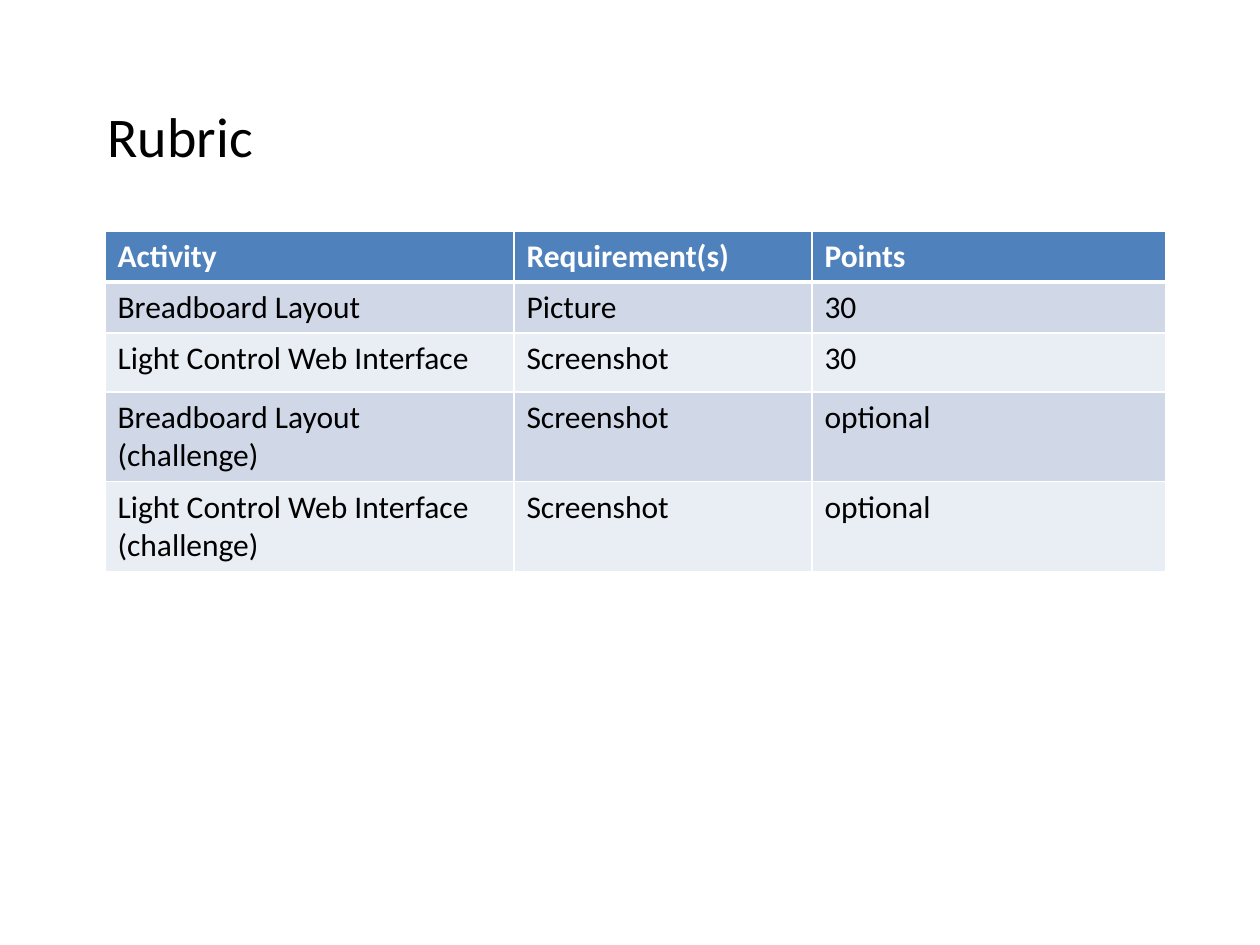
from dataclasses import dataclass

from lxml import etree
from pptx import Presentation, util as u
from pptx.dml.color import RGBColor
from pptx.oxml import ns

PX = 914400 / 126  # EMU in one px


@dataclass(frozen=True)
class Theme:
    font: str = "Calibri"
    heading_size: int = 32
    table_size: int = 18
    black: str = "000000"
    white: str = "FFFFFF"
    header: str = "4F81BD"
    bands: tuple = ("D0D8E8", "E9EDF4")
    line: int = 1
    header_line: int = 3


@dataclass(frozen=True)
class Row:
    activity: str
    requirement: str
    points: str
    height: int


THEME = Theme()
COLUMN_WIDTHS = (409, 298, 354)
ROWS = (
    Row("Activity", "Requirement(s)", "Points", 51),
    Row("Breadboard Layout", "Picture", "30", 51),
    Row("Light Control Web Interface", "Screenshot", "30", 59),
    Row("Breadboard Layout (challenge)", "Screenshot", "optional", 89),
    Row("Light Control Web Interface (challenge)", "Screenshot", "optional", 89),
)


def px(length: int) -> u.Emu:
    return u.Emu(round(length * PX))


def format_runs(paragraph, size: int, color: str, bold: bool = False) -> None:
    for run in paragraph.runs:
        run.font.name = THEME.font
        run.font.size = u.Pt(size)
        run.font.bold = bold
        run.font.color.rgb = RGBColor.from_string(color)


def add_border(cell, side: str, width: int) -> None:
    properties = cell._tc.get_or_add_tcPr()
    line = etree.SubElement(properties, ns.qn(f"a:ln{side}"), w=str(u.Pt(width)))
    fill = etree.SubElement(line, ns.qn("a:solidFill"))
    etree.SubElement(fill, ns.qn("a:srgbClr"), val=THEME.white)


def format_cell(cell, row_index: int) -> None:
    is_header = row_index == 0
    widths = {"L": THEME.line, "R": THEME.line,
              "T": THEME.header_line if row_index == 1 else THEME.line,
              "B": THEME.header_line if is_header else THEME.line}
    for side, width in widths.items():
        add_border(cell, side, width)
    fill = THEME.header if is_header else THEME.bands[(row_index - 1) % 2]
    cell.fill.solid()
    cell.fill.fore_color.rgb = RGBColor.from_string(fill)
    color = THEME.white if is_header else THEME.black
    format_runs(cell.text_frame.paragraphs[0], THEME.table_size, color, is_header)


def add_heading(slide, wording: str) -> None:
    body = slide.placeholders[1]
    body.left, body.top, body.width, body.height = map(px, (95, 95, 1134, 624))
    body.text_frame.text = wording
    paragraph = body.text_frame.paragraphs[0]
    etree.SubElement(paragraph._p.get_or_add_pPr(), ns.qn("a:buNone"))
    format_runs(paragraph, THEME.heading_size, THEME.black)


def add_rubric(slide, left: int, top: int) -> None:
    frame = slide.shapes.add_table(
        len(ROWS), len(COLUMN_WIDTHS), px(left), px(top),
        px(sum(COLUMN_WIDTHS)), px(sum(row.height for row in ROWS)))
    table = frame.table
    for column, width in zip(table.columns, COLUMN_WIDTHS):
        column.width = px(width)
    for row_index, row in enumerate(ROWS):
        table.rows[row_index].height = px(row.height)
        wordings = (row.activity, row.requirement, row.points)
        for cell, wording in zip(table.rows[row_index].cells, wordings):
            cell.text_frame.text = wording
            format_cell(cell, row_index)


def main() -> None:
    presentation = Presentation()
    presentation.slide_width, presentation.slide_height = px(1260), px(945)
    slide = presentation.slides.add_slide(presentation.slide_layouts[1])

    # Heading in the body placeholder; the title is not used
    title = slide.shapes.title
    title.element.getparent().remove(title.element)
    add_heading(slide, "Rubric")

    # Rubric table
    add_rubric(slide, 105, 231)
    presentation.save("out.pptx")


if __name__ == "__main__":
    main()
